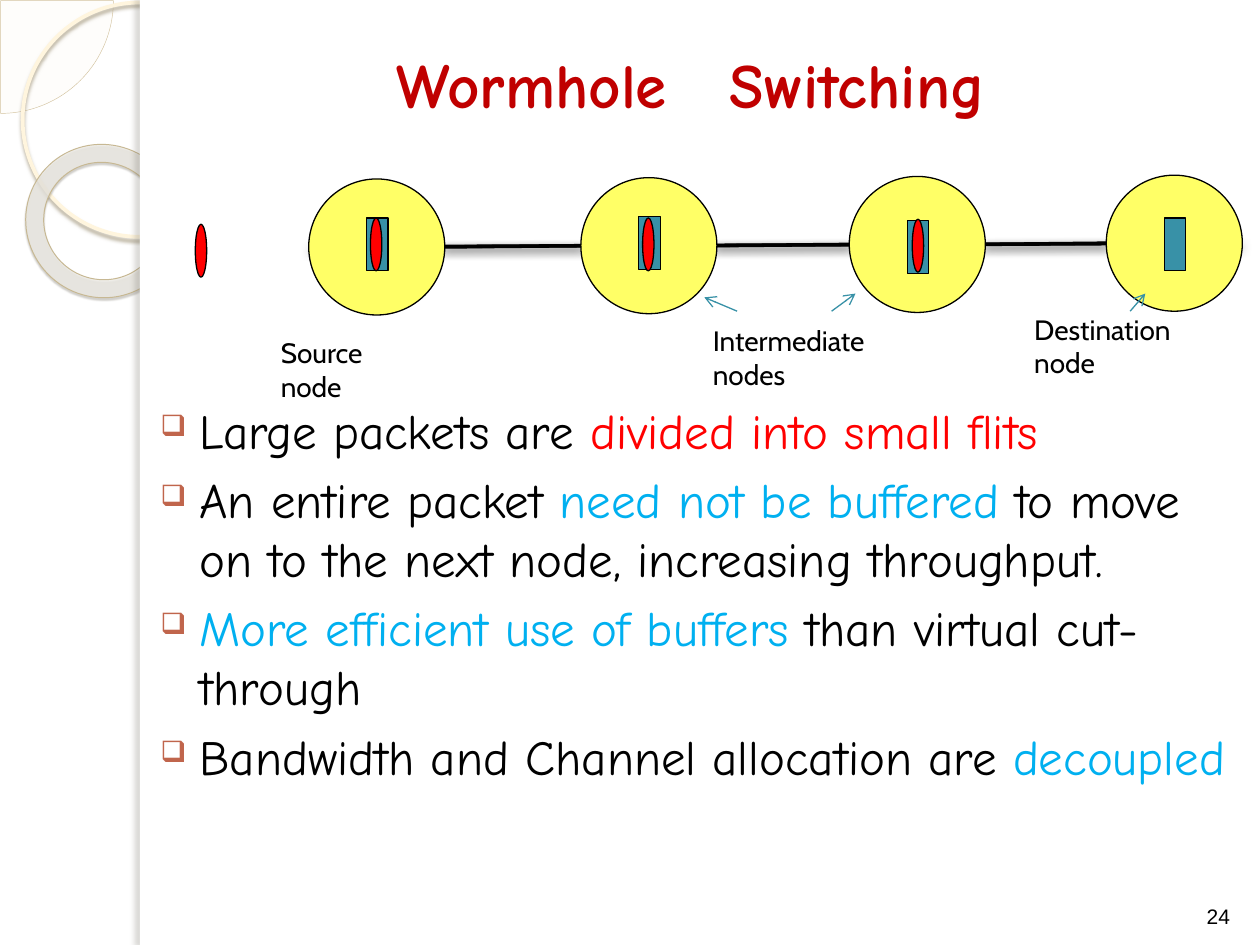
from dataclasses import dataclass

from lxml import etree
from pptx import Presentation
from pptx.dml.color import RGBColor
from pptx.enum.shapes import MSO_CONNECTOR, MSO_SHAPE
from pptx.enum.text import MSO_ANCHOR, PP_ALIGN
from pptx.oxml.ns import qn
from pptx.util import Inches, Pt

OVAL, RECTANGLE = MSO_SHAPE.OVAL, MSO_SHAPE.RECTANGLE
PIE, DONUT = MSO_SHAPE.PIE, MSO_SHAPE.DONUT
STRAIGHT = MSO_CONNECTOR.STRAIGHT
TOP, MIDDLE, BOTTOM = MSO_ANCHOR.TOP, MSO_ANCHOR.MIDDLE, MSO_ANCHOR.BOTTOM
LEFT, CENTER = PP_ALIGN.LEFT, PP_ALIGN.CENTER


@dataclass(frozen=True)
class Theme:
    black: str = "000000"
    white: str = "FFFFFF"
    red: str = "FF0000"
    title: str = "C00000"
    blue: str = "00B0F0"
    teal: str = "3891A7"
    node: str = "FFFF66"
    bullet: str = "C0654C"
    quarter: str = "FEFAF4"
    quarter_edge: str = "D3C39F"
    circle_edge: str = "FFF5DE"
    circle_shadow: str = "B0A68F"
    ring: str = "EDEBE5"
    ring_edge: str = "C7B893"
    ring_shadow: str = "5A5444"
    panel_shadow: str = "736F63"
    hand: str = "Comic Neue"
    label: str = "Cabin"
    plain: str = "Arial"
    title_size: int = 36
    body_size: int = 28
    label_size: int = 16
    number_size: int = 12


theme = Theme()
deck = Presentation()
deck.slide_width, deck.slide_height = Inches(10), Inches(7.5)
page = deck.slides.add_slide(deck.slide_layouts[6])
CELL = deck.slide_width / 100  # square grid: 100 columns by 75 rows


def style(item, fill=None, line=None, weight=0.75, shadow=None, opacity=100):
    """Sets fill, line and shadow (colour, opacity, blur, distance, angle)."""
    properties = item._element.spPr
    if hasattr(item, "fill"):
        if fill:
            item.fill.solid()
            item.fill.fore_color.rgb = RGBColor.from_string(fill)
            colour = properties.find(qn("a:solidFill"))[0]
            etree.SubElement(colour, qn("a:alpha"), val=str(opacity * 1000))
        else:
            item.fill.background()
    if line:
        item.line.color.rgb = RGBColor.from_string(line)
        item.line.width = Pt(weight)
    else:
        item.line.fill.background()
    effects = etree.SubElement(properties, qn("a:effectLst"))
    if shadow:
        colour, strength, blur, distance, angle = shadow
        outer = etree.SubElement(effects, qn("a:outerShdw"), blurRad=str(Pt(blur)),
                                 dist=str(Pt(distance)), dir=str(angle * 60000),
                                 algn="tl", rotWithShape="0")
        tint = etree.SubElement(outer, qn("a:srgbClr"), val=colour)
        etree.SubElement(tint, qn("a:alpha"), val=str(strength * 1000))


def draw(kind, place, **look):
    """Adds a shape, or a connector when kind is STRAIGHT, placed in grid cells."""
    add = page.shapes.add_connector if kind is STRAIGHT else page.shapes.add_shape
    item = add(kind, *(round(value * CELL) for value in place))
    style(item, **look)
    return item


# Side ornament and white page panel
quarter = draw(PIE, (-8.9, -8.9, 17.9, 17.9), fill=theme.quarter, opacity=33,
               line=theme.quarter_edge, weight=0.25)
quarter.adjustments[0], quarter.adjustments[1] = 0, 54
draw(OVAL, (1.8, 0.2, 18.6, 18.6), line=theme.circle_edge, weight=2.15,
     shadow=(theme.circle_shadow, 85, 2, 2, 90))
ring = draw(DONUT, (2, 11.5, 12.3, 12.1), fill=theme.ring, opacity=75,
            line=theme.ring_edge, weight=0.58, shadow=(theme.ring_shadow, 35, 1, 1.2, 75))
ring.adjustments[0] = 0.118
ring.rotation = 38.6
draw(RECTANGLE, (11.1, 0, 88.9, 75), fill=theme.white)
draw(RECTANGLE, (11.1, 0, 0.8, 75), fill=theme.white,
     shadow=(theme.panel_shadow, 25, 3, 3, 180))

# Nodes: circle left and top, buffer top, flit offset and top (None: no flit)
NODE, BUFFER_WIDTH, FLIT_WIDTH, BUFFER_HEIGHT = 10.8, 1.7, 0.9, 4.2
nodes = [
    (24.5, 14.2, 17.3, 4.9, 17.3),
    (46.1, 14.1, 17.2, 4.9, 17.3),
    (67.4, 14.0, 17.5, 5.0, 17.4),
    (87.8, 13.9, 17.3, None, None),
]

# Line through all nodes, then links between neighbours
middle = NODE / 2
links = [(nodes[0][0], nodes[0][1] + middle, nodes[-1][0] + NODE, nodes[-1][1] + middle)]
for here, there in zip(nodes, nodes[1:]):
    links.append((here[0] + NODE, here[1] + middle, there[0], there[1] + middle))
for ends in links:
    draw(STRAIGHT, ends, line=theme.black, weight=2, shadow=(theme.black, 43, 5, 2, 90))

for left, top, buffer_top, flit_offset, flit_top in nodes:
    draw(OVAL, (left, top, NODE, NODE), fill=theme.node, line=theme.black)
    draw(RECTANGLE, (left + 4.6, buffer_top, BUFFER_WIDTH, BUFFER_HEIGHT),
         fill=theme.teal, line=theme.black)
    if flit_top:
        draw(OVAL, (left + flit_offset, flit_top, FLIT_WIDTH, BUFFER_HEIGHT),
             fill=theme.red, line=theme.black)

# Flit waiting to enter the source node
draw(OVAL, (15.5, 17.8, FLIT_WIDTH, BUFFER_HEIGHT), fill=theme.red, line=theme.black)

# Pointers from the labels to the nodes
for ends in [(58.5, 24.7, 55.9, 23.6), (66, 24.7, 67.9, 23.3), (89.7, 24.7, 90.9, 23.3)]:
    pointer = draw(STRAIGHT, ends, line=theme.teal)
    etree.SubElement(pointer.line._get_or_add_ln(), qn("a:tailEnd"), type="arrow")

# Text: place, anchor, alignment, font, size, bold, paragraphs of (words, colour)
label_look = (TOP, LEFT, theme.label, theme.label_size, False)
body = [
    [("Large packets are ", theme.black), ("divided into small flits", theme.red)],
    [("An entire packet ", theme.black), ("need not be buffered ", theme.blue),
     ("to move on to the next node, increasing throughput.", theme.black)],
    [("More efficient use of buffers ", theme.blue),
     ("than virtual cut-through", theme.black)],
    [("Bandwidth and Channel allocation are ", theme.black), ("decoupled", theme.blue)],
]
texts = [
    ((12.9, 2.5, 83.8, 8.3), MIDDLE, CENTER, theme.hand, theme.title_size, True,
     [[("Wormhole　Switching", theme.title)]]),
    ((94.2, 69, 5, 5.2), BOTTOM, CENTER, theme.plain, theme.number_size, False,
     [[("24", theme.black)]]),
    ((21.3, 26.15, 13.5, 3.7), *label_look, [[("Source node", theme.black)]]),
    ((55.6, 25.2, 19.7, 3.7), *label_look, [[("Intermediate nodes", theme.black)]]),
    ((81.1, 24.3, 17.8, 3.7), *label_look, [[("Destination node", theme.black)]]),
    ((10.85, 28.95, 87.8, 41.7), TOP, LEFT, theme.hand, theme.body_size, False, body),
]
for place, anchor, alignment, font, size, bold, paragraphs in texts:
    box = page.shapes.add_textbox(*(round(value * CELL) for value in place))
    frame = box.text_frame
    frame.word_wrap = True
    frame.vertical_anchor = anchor
    if font == theme.label:
        frame.margin_right = Inches(0.2)  # breaks each label before its last word
    for index, spans in enumerate(paragraphs):
        para = frame.add_paragraph() if index else frame.paragraphs[0]
        para.alignment = alignment
        if paragraphs is body:
            para.space_before = Pt(6)
            if index == 0:
                para.line_spacing = 1.5
            settings = para._p.get_or_add_pPr()
            settings.set("marL", str(Inches(0.4)))
            settings.set("indent", str(Inches(-0.31)))
            tint = etree.SubElement(settings, qn("a:buClr"))
            etree.SubElement(tint, qn("a:srgbClr"), val=theme.bullet)
            etree.SubElement(settings, qn("a:buSzPct"), val="60000")
            etree.SubElement(settings, qn("a:buChar"), char="❑")
        para.font.name, para.font.size, para.font.bold = font, Pt(size), bold
        for words, colour in spans:
            span = para.add_run()
            span.text = words
            span.font.color.rgb = RGBColor.from_string(colour)

deck.save("out.pptx")
